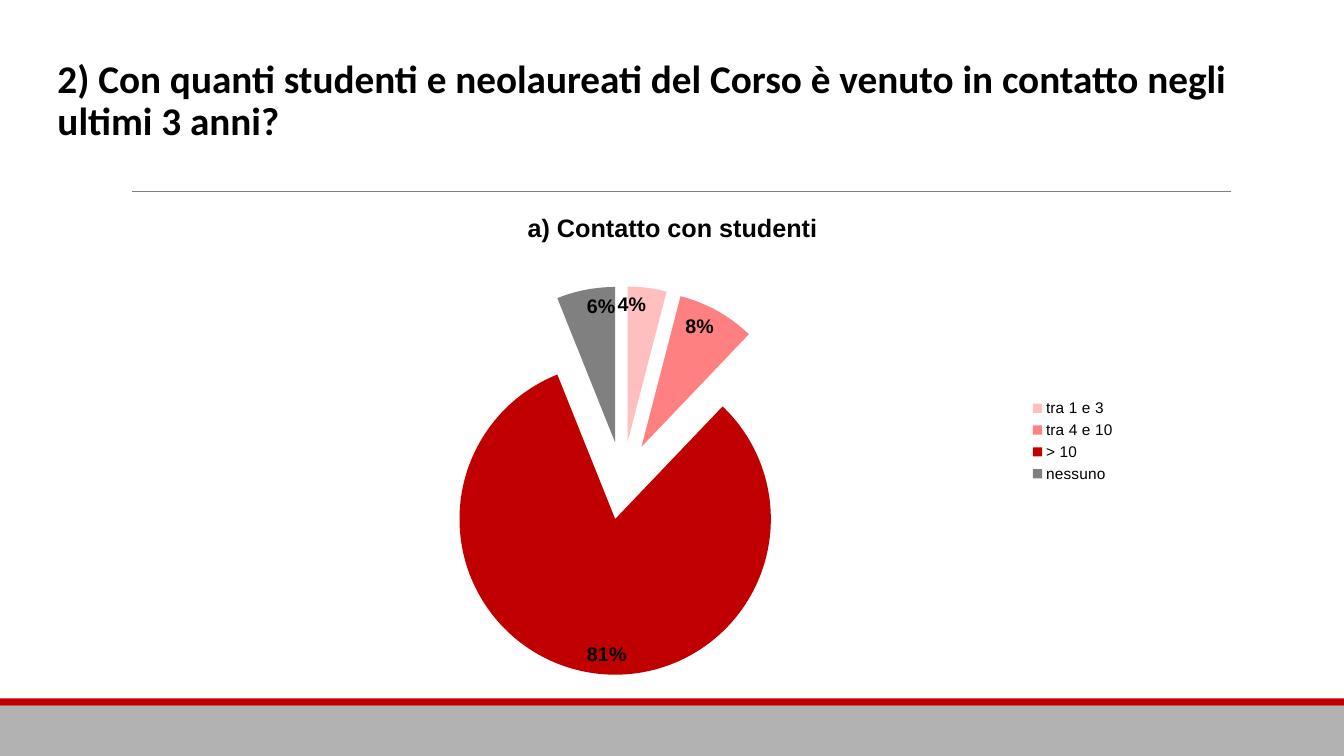
from pptx import Presentation
from pptx.chart.data import CategoryChartData
from pptx.dml.color import RGBColor
from pptx.enum.chart import XL_CHART_TYPE as ChartType, XL_LABEL_POSITION as LabelPos
from pptx.enum.chart import XL_LEGEND_POSITION as LegendPos
from pptx.enum.shapes import MSO_CONNECTOR as Connector, MSO_SHAPE as Shape
from pptx.enum.text import MSO_ANCHOR as Anchor
from pptx.oxml import parse_xml
from pptx.oxml.ns import nsdecls
from pptx.util import Inches, Pt
from lxml.etree import SubElement

# Content
QUESTION = "2) Con quanti studenti e neolaureati del Corso è venuto in contatto negli ultimi 3 anni?"
CHART_TITLE = "a) Contatto con studenti"
ANSWERS = [  # category, percent, colour
    ("tra 1 e 3", 4, "pale"),
    ("tra 4 e 10", 8, "pink"),
    ("> 10", 81, "red"),
    ("nessuno", 6, "grey"),
]
COLORS = {"pale": "FFBFBF", "pink": "FF8080", "red": "C00000", "grey": "808080",
          "band": "B2B2B2", "text": "000000"}
WIDTH, HEIGHT = 13.33, 7.5
FOOTER_TOP, STRIPE = 7, 0.07
RULE_Y = 1.9
PIE_AREA = {"x": 0.23, "y": 0.19, "w": 0.43, "h": 0.78}  # shares of the chart
EXPLOSION = 25


def rgb(name):
    return RGBColor.from_string(COLORS[name])


def set_font(font, face, size, bold=False):
    font.name, font.size, font.bold = face, Pt(size), bold
    font.color.rgb = rgb("text")


prs = Presentation()
prs.slide_width, prs.slide_height = Inches(WIDTH), Inches(HEIGHT)
slide = prs.slides.add_slide(prs.slide_layouts[6])
shapes = slide.shapes

# Footer band and red stripe above it
for top, height, color in [(FOOTER_TOP, HEIGHT - FOOTER_TOP, "band"),
                           (FOOTER_TOP - STRIPE, STRIPE, "red")]:
    bar = shapes.add_shape(Shape.RECTANGLE, 0, Inches(top), Inches(WIDTH), Inches(height))
    bar.shadow.inherit = False
    bar.fill.solid()
    bar.fill.fore_color.rgb = rgb(color)
    bar.line.fill.background()

# Rule under the question
rule = shapes.add_connector(Connector.STRAIGHT, Inches(1.31), Inches(RULE_Y),
                            Inches(12.21), Inches(RULE_Y))
rule.line.color.rgb = rgb("grey")
rule.line.width = Pt(0.5)
rule._element.spPr.append(parse_xml(f"<a:effectLst {nsdecls('a')}/>"))

# Question, raised by one line within its box
question = shapes.add_textbox(Inches(0.57), Inches(0.44), Inches(12.41), Inches(1.56)).text_frame
question.word_wrap = True
question.vertical_anchor = Anchor.MIDDLE
question.margin_left = question.margin_right = question.margin_top = 0
question.margin_bottom = Inches(0.42)
question.text = QUESTION
question.paragraphs[0].line_spacing = 0.9
set_font(question.paragraphs[0].font, "Calibri", 28, True)

# Pie chart
data = CategoryChartData()
data.categories = [name for name, _, _ in ANSWERS]
data.add_series(CHART_TITLE, [percent for _, percent, _ in ANSWERS])
chart = shapes.add_chart(ChartType.PIE, Inches(2.17), Inches(RULE_Y),
                         Inches(9), Inches(4.95), data).chart
set_font(chart.font, "Arial", 10)
chart.has_title = True
chart.chart_title.text_frame.text = CHART_TITLE
set_font(chart.chart_title.text_frame.paragraphs[0].font, "Arial", 18, True)
chart.has_legend = True
chart.legend.position = LegendPos.RIGHT
chart.legend.include_in_layout = False
set_font(chart.legend.font, "Arial", 11)

# Slices and labels
pie = chart.plots[0]
pie.vary_by_categories = True
answers = pie.series[0]
for i, (_, _, color) in enumerate(ANSWERS):
    fill = answers.points[i].format.fill
    fill.solid()
    fill.fore_color.rgb = rgb(color)
labels = answers.data_labels
labels.show_value = True
labels.number_format, labels.number_format_is_linked = '0"%"', False
labels.position = LabelPos.INSIDE_END
set_font(labels.font, "Arial", 14, True)

# Exploded slices
first_point = answers._element.find("{*}dPt")
first_point.addprevious(parse_xml(f'<c:explosion {nsdecls("c")} val="{EXPLOSION}"/>'))

# Place of the pie inside the chart
plot_area = chart._chartSpace.chart.plotArea
for old in plot_area.findall("{*}layout"):
    plot_area.remove(old)
layout = parse_xml(f"<c:layout {nsdecls('c')}><c:manualLayout/></c:layout>")
ns = layout.tag.removesuffix("layout")
settings = {"layoutTarget": "inner", "xMode": "edge", "yMode": "edge", **PIE_AREA}
for key, value in settings.items():
    SubElement(layout[0], ns + key, val=str(value))
plot_area.insert(0, layout)

prs.save("out.pptx")
